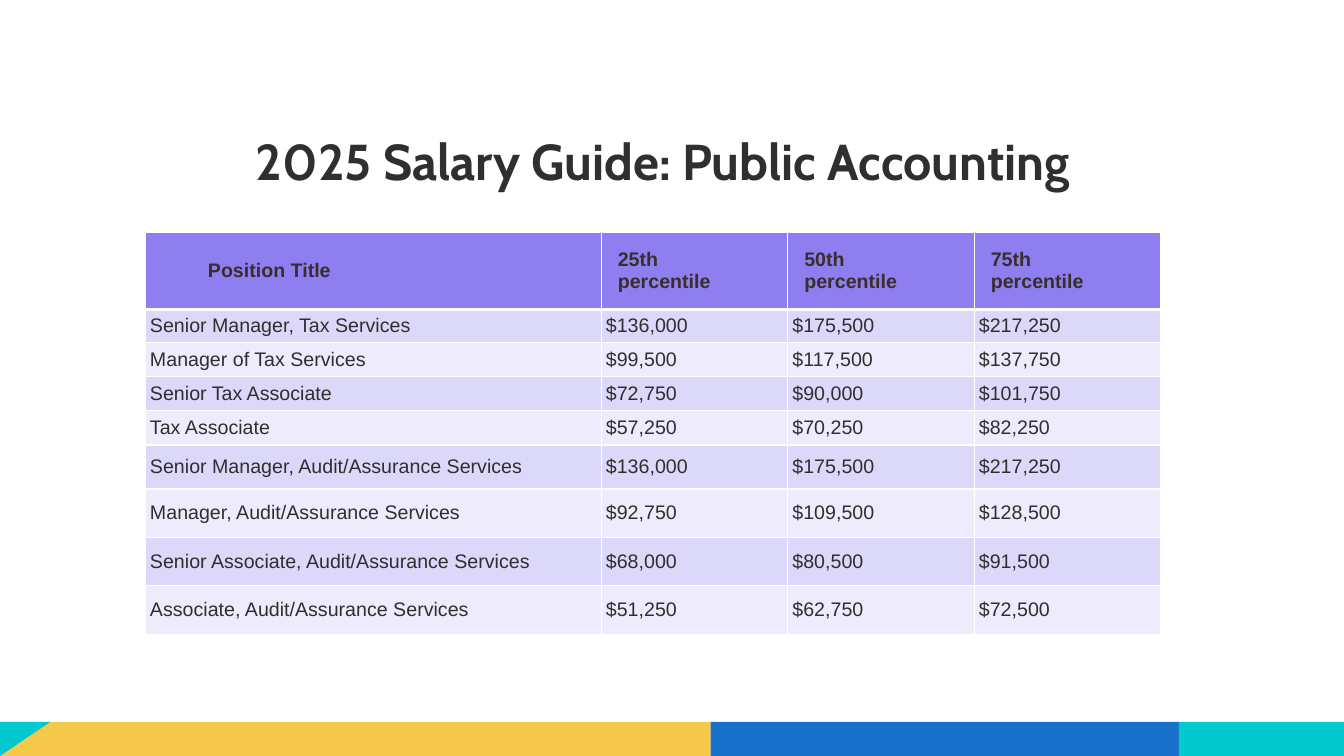
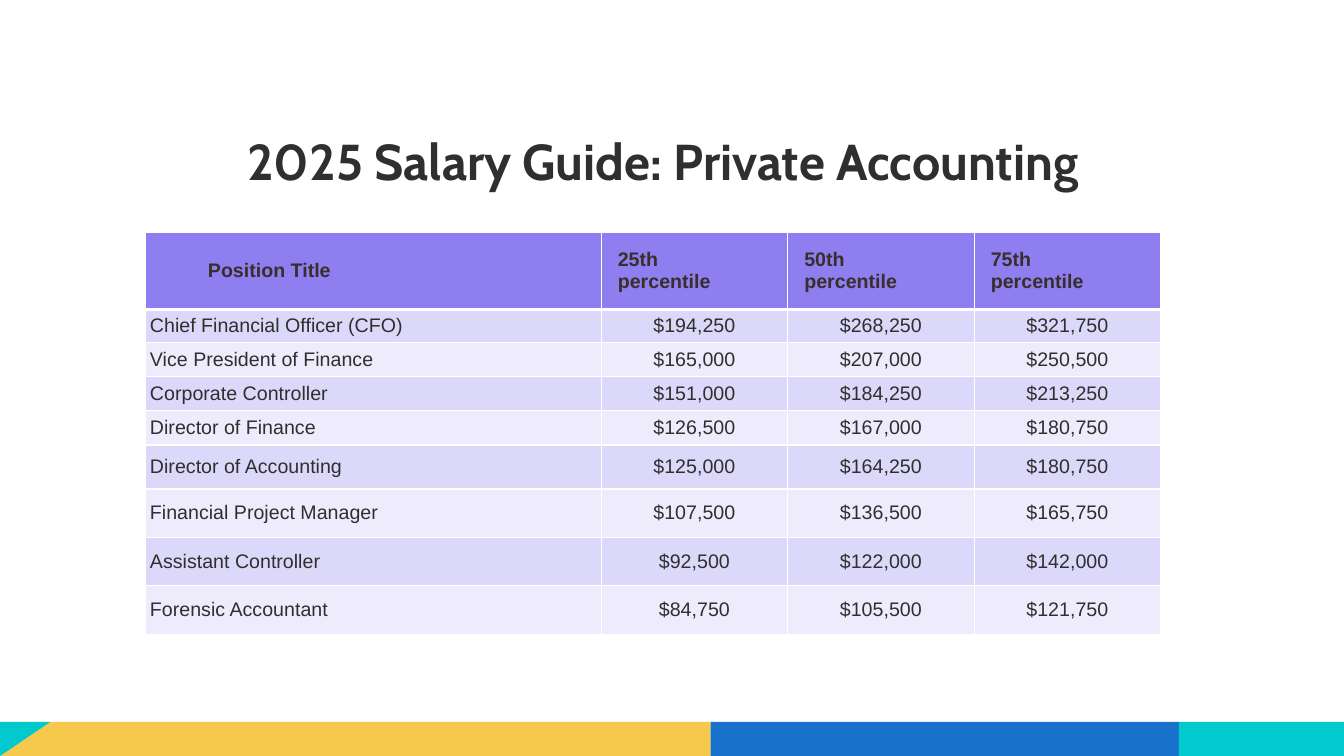
from lxml.etree import SubElement
from pptx import Presentation
from pptx.dml.color import RGBColor
from pptx.enum.shapes import MSO_SHAPE as Shape
from pptx.enum.text import MSO_ANCHOR as Anchor, PP_ALIGN as Align
from pptx.oxml.ns import qn
from pptx.util import Cm, Pt

# Content
HEADERS = ["Position Title", "25th\npercentile", "50th\npercentile", "75th\npercentile"]
GUIDES = [
    {
        "title": "2025 Salary Guide: Public Accounting",
        "salary_align": Align.LEFT,
        "salaries": [
            ("Senior Manager, Tax Services", 136000, 175500, 217250),
            ("Manager of Tax Services", 99500, 117500, 137750),
            ("Senior Tax Associate", 72750, 90000, 101750),
            ("Tax Associate", 57250, 70250, 82250),
            ("Senior Manager, Audit/Assurance Services", 136000, 175500, 217250),
            ("Manager, Audit/Assurance Services", 92750, 109500, 128500),
            ("Senior Associate, Audit/Assurance Services", 68000, 80500, 91500),
            ("Associate, Audit/Assurance Services", 51250, 62750, 72500),
        ],
    },
    {
        "title": "2025 Salary Guide: Private Accounting",
        "salary_align": Align.CENTER,
        "salaries": [
            ("Chief Financial Officer (CFO)", 194250, 268250, 321750),
            ("Vice President of Finance", 165000, 207000, 250500),
            ("Corporate Controller", 151000, 184250, 213250),
            ("Director of Finance", 126500, 167000, 180750),
            ("Director of Accounting", 125000, 164250, 180750),
            ("Financial Project Manager", 107500, 136500, 165750),
            ("Assistant Controller", 92500, 122000, 142000),
            ("Forensic Accountant", 84750, 105500, 121750),
        ],
    },
]

# Shared style, lengths in centimetres
COLORS = {
    "ink": "2F2F2F", "header_ink": "382E2C", "white": "FFFFFF",
    "header": "8E7EF0", "odd_row": "DBD8F9", "even_row": "EEECFC",
    "yellow": "F6C94C", "blue": "1871CA", "teal": "02C9CE",
}
PAGE_W, PAGE_H = 33.87, 19.05
BAND_H = 0.86
BANDS = [("yellow", 17.91), ("blue", 29.71), ("teal", PAGE_W)]  # colour, right edge
CORNER_W = 1.27
TITLE_BOX = (3.66, 2.46, 26.09, 3.15)
TABLE_LEFT, TABLE_TOP = 3.66, 5.85
COL_WIDTHS = [11.49] + [4.7] * 3
ROW_HEIGHTS = [1.82, 0.82] + [0.86] * 3 + [1.11] + [1.22] * 3
CELL_MARGIN = 0.12
HEADER_MARGIN, HEADER_INDENT, HEADER_PAD = 0.42, 1.58, 0.38


def rgb(name):
    return RGBColor.from_string(COLORS[name])


def paint(shape, color):
    shape.shadow.inherit = False
    shape.fill.solid()
    shape.fill.fore_color.rgb = rgb(color)
    shape.line.fill.background()


def write(para, text, font, size, color, bold, align):
    para.alignment = align
    for index, line in enumerate(text.split("\n")):
        if index:
            para.add_line_break()
        span = para.add_run()
        span.text = line
        span.font.name = font
        span.font.size = Pt(size)
        span.font.bold = bold
        span.font.color.rgb = rgb(color)


def add_footer(page):
    top = PAGE_H - BAND_H
    left = 0
    for color, right in BANDS:
        band = page.shapes.add_shape(
            Shape.RECTANGLE, Cm(left), Cm(top), Cm(right - left), Cm(BAND_H))
        paint(band, color)
        left = right
    # Triangle in the bottom left corner
    outline = page.shapes.build_freeform(Cm(0), Cm(PAGE_H))
    outline.add_line_segments([(Cm(0), Cm(top)), (Cm(CORNER_W), Cm(top))], close=True)
    paint(outline.convert_to_shape(), "teal")


def add_title(page, text):
    box = page.shapes.add_textbox(*map(Cm, TITLE_BOX))
    frame = box.text_frame
    frame.word_wrap = True
    frame.vertical_anchor = Anchor.MIDDLE
    frame.margin_left = frame.margin_right = frame.margin_top = frame.margin_bottom = 0
    write(frame.paragraphs[0], text, "Cabin", 36, "ink", True, Align.CENTER)


def set_borders(cell, bottom_width):
    properties = cell._tc.get_or_add_tcPr()
    for side, width in (("L", 1), ("R", 1), ("T", 1), ("B", bottom_width)):
        line = SubElement(properties, qn(f"a:ln{side}"), w=str(Pt(width)))
        fill = SubElement(line, qn("a:solidFill"))
        SubElement(fill, qn("a:srgbClr"), val=COLORS["white"])


def fill_cell(cell, text, row, col, salary_align):
    header = row == 0
    set_borders(cell, 3 if header else 1)
    cell.fill.solid()
    cell.fill.fore_color.rgb = rgb(
        "header" if header else "odd_row" if row % 2 else "even_row")
    cell.vertical_anchor = Anchor.MIDDLE
    side = HEADER_MARGIN if header else CELL_MARGIN
    cell.margin_left = Cm(HEADER_INDENT if header and col == 0 else side)
    cell.margin_right = Cm(side)
    cell.margin_top = cell.margin_bottom = Cm(HEADER_PAD if header else CELL_MARGIN)
    write(cell.text_frame.paragraphs[0], text, "Arial", 14,
          "header_ink" if header else "ink", header,
          Align.LEFT if header or col == 0 else salary_align)


def add_salary_table(page, salaries, salary_align):
    rows = [HEADERS] + [
        [position] + [f"${amount:,}" for amount in amounts]
        for position, *amounts in salaries]
    table = page.shapes.add_table(
        len(rows), len(HEADERS), Cm(TABLE_LEFT), Cm(TABLE_TOP),
        Cm(sum(COL_WIDTHS)), Cm(sum(ROW_HEIGHTS))).table
    table.horz_banding = False
    for column, width in zip(table.columns, COL_WIDTHS):
        column.width = Cm(width)
    for row, (texts, height) in enumerate(zip(rows, ROW_HEIGHTS)):
        table.rows[row].height = Cm(height)
        for col, text in enumerate(texts):
            fill_cell(table.cell(row, col), text, row, col, salary_align)


def main():
    deck = Presentation()
    deck.slide_width, deck.slide_height = Cm(PAGE_W), Cm(PAGE_H)
    for guide in GUIDES:
        page = deck.slides.add_slide(deck.slide_layouts[6])
        add_footer(page)
        add_title(page, guide["title"])
        add_salary_table(page, guide["salaries"], guide["salary_align"])
    deck.save("out.pptx")


if __name__ == "__main__":
    main()
